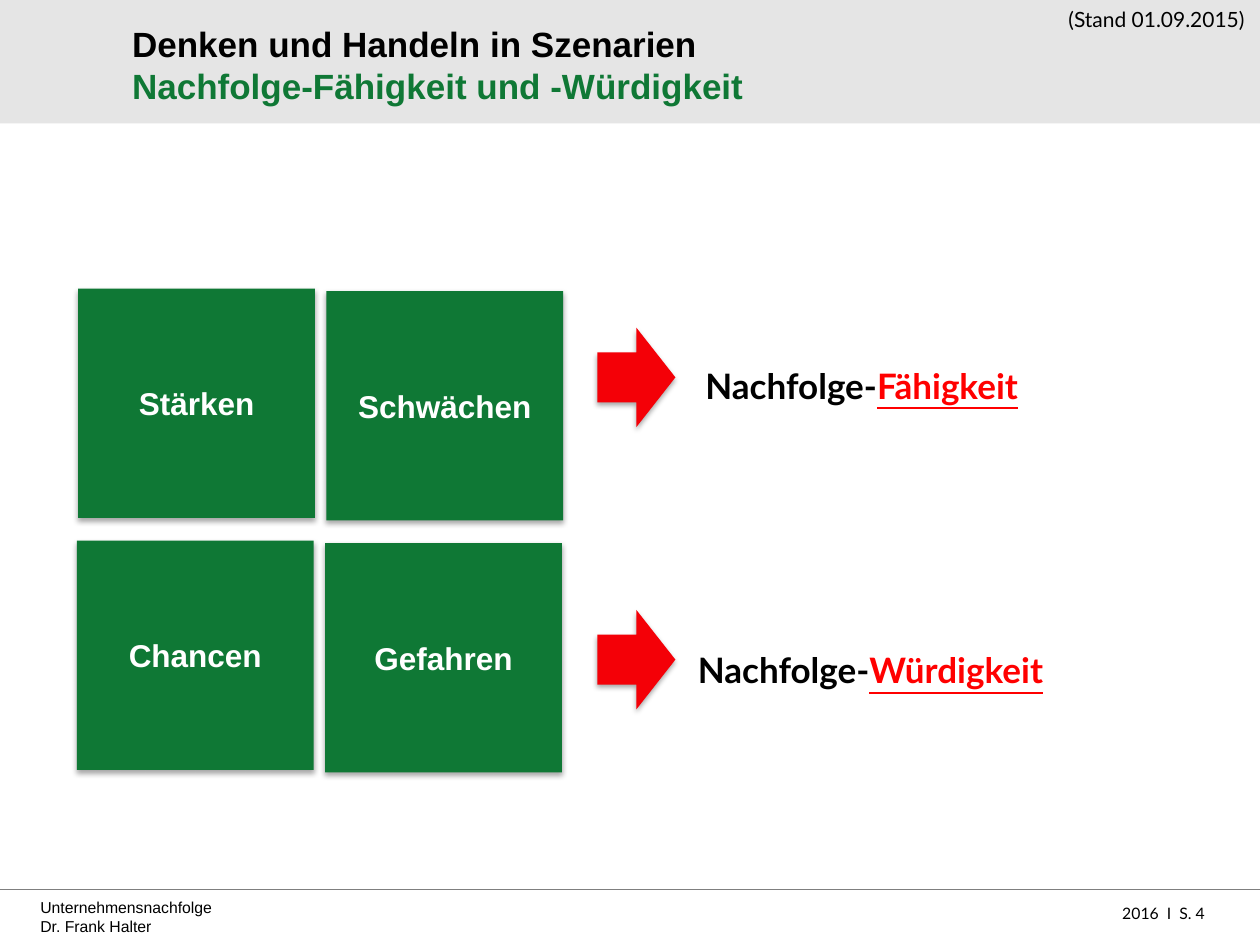
import pptx
import pptx.util
import pptx.dml.color
import pptx.enum.shapes
import pptx.enum.text
import pptx.oxml
import pptx.oxml.ns

Inches, Pt = pptx.util.Inches, pptx.util.Pt
SHAPE = pptx.enum.shapes.MSO_SHAPE
ALIGN = pptx.enum.text.PP_ALIGN
ANCHOR = pptx.enum.text.MSO_ANCHOR
COLORS = {"black": "000000", "white": "FFFFFF", "green": "0F7835", "arrow": "F40007",
          "red": "FF0000", "band": "E5E5E5", "rule": "7F7F7F"}
SHADOW = (
    f'<a:effectLst {pptx.oxml.ns.nsdecls("a")}>'
    f'<a:outerShdw blurRad="{Pt(3.1)}" dist="{Pt(1.8)}" dir="5400000" rotWithShape="0">'
    '<a:srgbClr val="000000"><a:alpha val="35000"/></a:srgbClr>'
    '</a:outerShdw></a:effectLst>')


def rgb(name):
    return pptx.dml.color.RGBColor.from_string(COLORS[name])


def write(shape, lines, size=18, font="Arial", bold=False, align=ALIGN.LEFT,
          anchor=ANCHOR.TOP, wrap=True, inset=None, spacing=None):
    """Fill a shape; each line is a list of (text, color, underline), "\\n" breaks."""
    frame = shape.text_frame
    frame.word_wrap = wrap
    frame.vertical_anchor = anchor
    if inset is not None:
        frame.margin_left = frame.margin_right = Inches(inset)
        frame.margin_top = frame.margin_bottom = Inches(inset)
    for i, line in enumerate(lines):
        para = frame.paragraphs[0] if i == 0 else frame.add_paragraph()
        para.alignment = align
        if spacing:
            para.line_spacing = spacing
        for text, color, under in line:
            if text == "\n":
                para.add_line_break()
                continue
            run = para.add_run()
            run.text = text
            run.font.size, run.font.name, run.font.bold = Pt(size), font, bold
            run.font.color.rgb = rgb(color)
            if under:
                run.font.underline = True


def label(slide, box, lines, **style):
    shape = slide.shapes.add_textbox(*map(Inches, box))
    write(shape, lines, **style)


def block(slide, kind, box, color, shadow=True):
    shape = slide.shapes.add_shape(kind, *map(Inches, box))
    shape.fill.solid()
    shape.fill.fore_color.rgb = rgb(color)
    shape.line.fill.background()
    shape.shadow.inherit = False
    if shadow:
        props = shape._element.spPr
        props.remove(props.find(pptx.oxml.ns.qn("a:effectLst")))
        props.append(pptx.oxml.parse_xml(SHADOW))
    return shape


def header(slide, left, top, width, height):
    block(slide, SHAPE.RECTANGLE, (left, top, width, height), "band", shadow=False)
    label(slide, (left + 0.95, top + 0.12, 8.64, 0.79),
          [[("Denken und Handeln in Szenarien", "black", False), ("\n", "black", False),
            ("Nachfolge-Fähigkeit und -Würdigkeit", "green", False)]],
          size=20, bold=True, anchor=ANCHOR.MIDDLE)
    label(slide, (left + width - 1.64, top, 1.64, 0.3),
          [[("(Stand 01.09.2015)", "black", False)]],
          size=12, font="Lato", align=ALIGN.CENTER, wrap=False)


def matrix(slide, left, top, names):
    """Place the SWOT squares; each row and column is slightly offset."""
    for row, pair in enumerate(names):
        for col, name in enumerate(pair):
            box = (left + 1.97 * col - 0.01 * row, top + 2 * row + 0.02 * col, 1.88, 1.82)
            square = block(slide, SHAPE.RECTANGLE, box, "green")
            write(square, [[(name, "white", False)]], bold=True,
                  align=ALIGN.CENTER, anchor=ANCHOR.MIDDLE)


def result(slide, left, top, word, shift, drop, width):
    """Place an arrow and, shifted from it, the conclusion it points at."""
    block(slide, SHAPE.RIGHT_ARROW, (left, top, 0.62, 0.79), "arrow")
    label(slide, (left + shift, top + drop, width, 0.44),
          [[("Nachfolge-", "black", False), (word, "red", True)]],
          size=20, font="Lato", bold=True, wrap=False)


def footer(slide, left, top, width):
    rule = slide.shapes.add_connector(
        pptx.enum.shapes.MSO_CONNECTOR.STRAIGHT,
        Inches(left), Inches(top), Inches(left + width), Inches(top))
    rule.line.color.rgb = rgb("rule")
    rule.line.width = Pt(0.25)
    rule._element.spPr.append(pptx.oxml.parse_xml(
        f'<a:effectLst {pptx.oxml.ns.nsdecls("a")}/>'))
    label(slide, (left + 0.31, top + 0.05, 5.45, 0.34),
          [[("Unternehmensnachfolge", "black", False)],
           [("Dr. Frank Halter", "black", False)]],
          size=9, anchor=ANCHOR.BOTTOM, inset=0.02)
    label(slide, (left + 7.94, top + 0.03, 1.73, 0.28),
          [[("2016  I  S. 4", "black", False)]],
          size=9, font="Lato", align=ALIGN.RIGHT, spacing=1.2)


def main():
    deck = pptx.Presentation()
    deck.slide_width, deck.slide_height = Inches(10), Inches(7.5)
    slide = deck.slides.add_slide(deck.slide_layouts[6])
    footer(slide, -0.01, 7.06, 10.04)
    header(slide, 0, 0, 10, 0.98)
    matrix(slide, 0.62, 2.29, [("Stärken", "Schwächen"), ("Chancen", "Gefahren")])
    result(slide, 4.74, 2.6, "Fähigkeit", 0.76, 0.24, 2.88)
    result(slide, 4.74, 4.84, "Würdigkeit", 0.7, 0.26, 3.1)
    deck.save("out.pptx")


if __name__ == "__main__":
    main()
